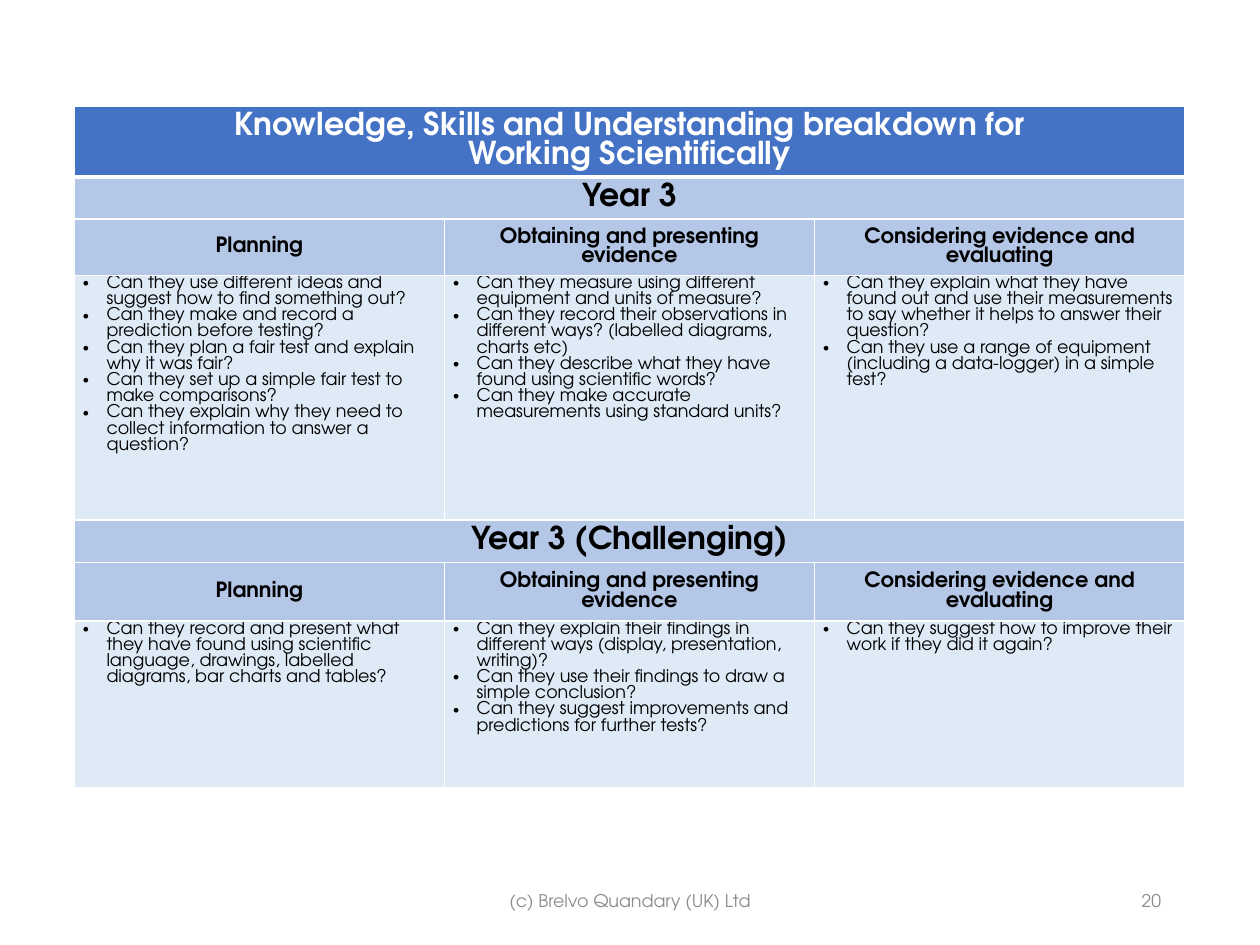
import pptx
import pptx.dml.color
import pptx.enum.text
import pptx.oxml.ns
import pptx.util
from lxml import etree

Pt = pptx.util.Pt
RGBColor = pptx.dml.color.RGBColor
Align = pptx.enum.text.PP_ALIGN
Anchor = pptx.enum.text.MSO_ANCHOR
qn = pptx.oxml.ns.qn

FONT = "TeX Gyre Adventor"
WHITE = RGBColor(0xFF, 0xFF, 0xFF)
BLACK = RGBColor(0x00, 0x00, 0x00)
GREY = RGBColor(0x8C, 0x8C, 0x8C)
TITLE_BLUE = RGBColor(0x44, 0x72, 0xC4)
HEADING_BLUE = RGBColor(0xB4, 0xC7, 0xE7)
BODY_BLUE = RGBColor(0xDE, 0xEB, 0xF7)

WIDE_MARGINS = (7.2, 3.6)
NARROW_MARGINS = (4.9, 0)
BULLET_INDENT = 13.5
TABLE_LEFT, TABLE_TOP = 42.5, 60.5
COLUMN_WIDTH = 211.5
ROW_HEIGHTS = [29.5, 23, 32.5, 139.5, 24.5, 33.5, 95]

TITLE = "Knowledge, Skills and Understanding breakdown for\nWorking Scientifically"
HEADINGS = [
    "Planning",
    "Obtaining and presenting evidence",
    "Considering evidence and evaluating",
]
YEAR_3 = [
    [
        "Can they use different ideas and suggest how to find something out?",
        "Can they make and record a prediction before testing?",
        "Can they plan a fair test and explain why it was fair?",
        "Can they set up a simple fair test to make comparisons?",
        "Can they explain why they need to collect information to answer a question?",
    ],
    [
        "Can they measure using different equipment and units of measure?",
        "Can they record their observations in different ways? "
        "(labelled diagrams, charts etc)",
        "Can they describe what they have found using scientific words?",
        "Can they make accurate measurements using standard units?",
    ],
    [
        "Can they explain what they have found out and use their measurements "
        "to say whether it helps to answer their question?",
        "Can they use a range of equipment (including a data-logger) in a simple test?",
    ],
]
YEAR_3_CHALLENGING = [
    [
        "Can they record and present what they have found using scientific "
        "language, drawings, labelled diagrams, bar charts and tables?",
    ],
    [
        "Can they explain their findings in different ways "
        "(display, presentation, writing)?",
        "Can they use their findings to draw a simple conclusion?",
        "Can they suggest improvements and predictions for further tests?",
    ],
    ["Can they suggest how to improve their work if they did it again?"],
]


def write_text(text_frame, text, size, color, alignment, bold=False):
    text_frame.text = text
    for paragraph in text_frame.paragraphs:
        paragraph.alignment = alignment
        for run in paragraph.runs:
            run.font.name = FONT
            run.font.size = Pt(size)
            run.font.bold = bold
            run.font.color.rgb = color


def add_bullets(text_frame):
    for paragraph in text_frame.paragraphs:
        properties = paragraph._p.get_or_add_pPr()
        properties.set("marL", str(Pt(BULLET_INDENT)))
        properties.set("indent", str(-Pt(BULLET_INDENT)))
        etree.SubElement(properties, qn("a:buFont"), typeface="Arial")
        etree.SubElement(properties, qn("a:buChar"), char="•")


def set_borders(cell, top=1, bottom=1):
    """Draw white borders; call before filling, as the schema puts lines first."""
    properties = cell._tc.get_or_add_tcPr()
    for side, width in (("L", 1), ("R", 1), ("T", top), ("B", bottom)):
        line = etree.SubElement(properties, qn(f"a:ln{side}"), w=str(Pt(width)))
        fill = etree.SubElement(line, qn("a:solidFill"))
        etree.SubElement(fill, qn("a:srgbClr"), val=str(WHITE))


def style_cell(cell, fill, margins, anchor):
    cell.fill.solid()
    cell.fill.fore_color.rgb = fill
    cell.margin_left = cell.margin_right = Pt(margins[0])
    cell.margin_top = cell.margin_bottom = Pt(margins[1])
    cell.vertical_anchor = anchor


def fill_banner(table, row, text, fill, color, margins, anchor):
    """Write a heading across all columns of a row."""
    cell = table.cell(row, 0)
    cell.merge(table.cell(row, len(table.columns) - 1))
    style_cell(cell, fill, margins, anchor)
    write_text(cell.text_frame, text, 18, color, Align.CENTER, bold=True)


def fill_year(table, first_row, name, margins, questions):
    """Write a year banner, its column headings and its questions."""
    fill_banner(table, first_row, name, HEADING_BLUE, BLACK, margins, Anchor.MIDDLE)
    for column, heading in enumerate(HEADINGS):
        cell = table.cell(first_row + 1, column)
        is_last = column == len(HEADINGS) - 1
        heading_margins = WIDE_MARGINS if is_last else NARROW_MARGINS
        style_cell(cell, HEADING_BLUE, heading_margins, Anchor.MIDDLE)
        write_text(cell.text_frame, heading, 12, BLACK, Align.CENTER, bold=True)

        cell = table.cell(first_row + 2, column)
        style_cell(cell, BODY_BLUE, NARROW_MARGINS, Anchor.TOP)
        write_text(cell.text_frame, "\n".join(questions[column]), 10, BLACK, Align.LEFT)
        add_bullets(cell.text_frame)


def add_skills_table(slide):
    table = slide.shapes.add_table(
        len(ROW_HEIGHTS), len(HEADINGS), Pt(TABLE_LEFT), Pt(TABLE_TOP),
        Pt(COLUMN_WIDTH * len(HEADINGS)), Pt(sum(ROW_HEIGHTS)),
    ).table
    table.first_row = False
    table.horz_banding = False
    for column in table.columns:
        column.width = Pt(COLUMN_WIDTH)
    for index, height in enumerate(ROW_HEIGHTS):
        table.rows[index].height = Pt(height)
        for cell in table.rows[index].cells:
            set_borders(cell, top=3 if index == 1 else 1, bottom=3 if index == 0 else 1)

    fill_banner(table, 0, TITLE, TITLE_BLUE, WHITE, WIDE_MARGINS, Anchor.TOP)
    fill_year(table, 1, "Year 3", WIDE_MARGINS, YEAR_3)
    fill_year(table, 4, "Year 3 (Challenging)", NARROW_MARGINS, YEAR_3_CHALLENGING)


def add_footer_text(slide, text, left, width, alignment):
    text_box = slide.shapes.add_textbox(Pt(left), Pt(500.5), Pt(width), Pt(28.75))
    text_frame = text_box.text_frame
    text_frame.word_wrap = True
    text_frame.vertical_anchor = Anchor.MIDDLE
    write_text(text_frame, text, 10, GREY, alignment)


def main():
    presentation = pptx.Presentation()
    presentation.slide_width = Pt(720)
    presentation.slide_height = Pt(540)
    slide = presentation.slides.add_slide(presentation.slide_layouts[6])
    add_skills_table(slide)
    add_footer_text(slide, "(c) Brelvo Quandary (UK) Ltd", 238.5, 243, Align.CENTER)
    add_footer_text(slide, "20", 508.5, 162, Align.RIGHT)
    presentation.save("out.pptx")


if __name__ == "__main__":
    main()
